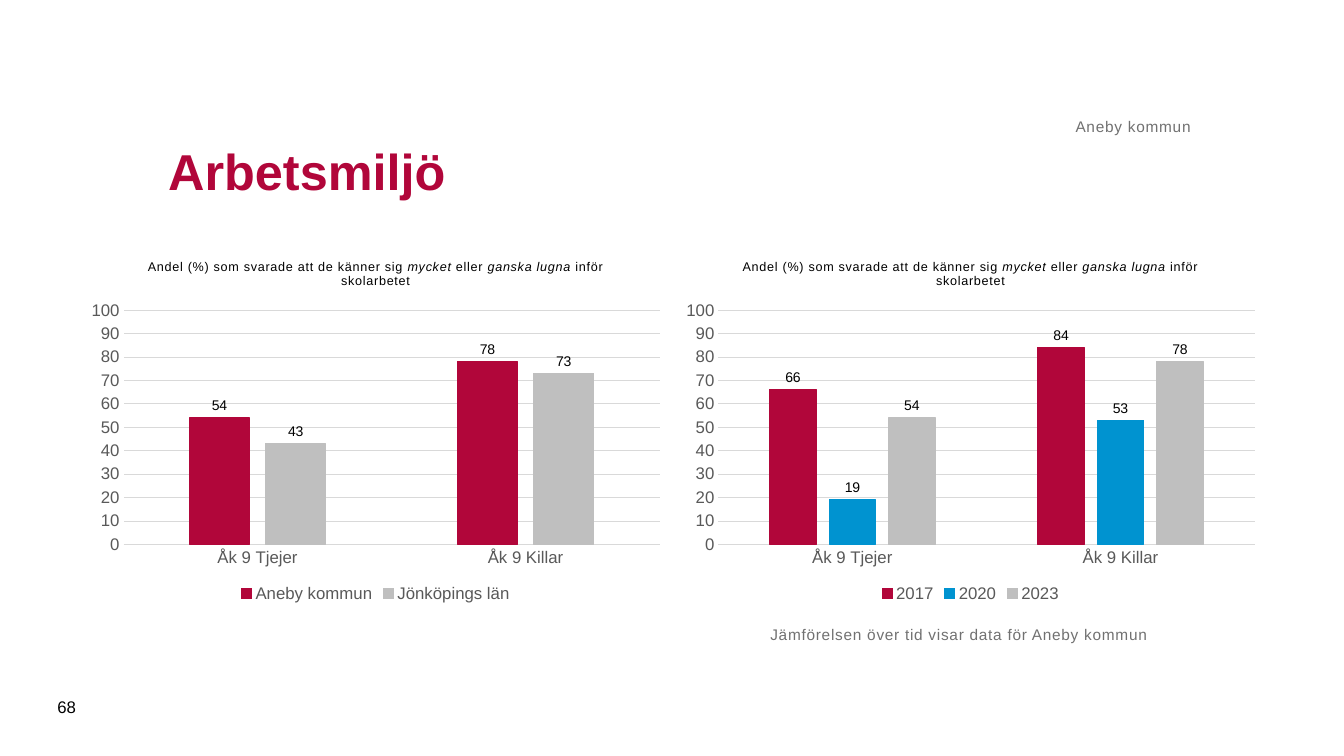
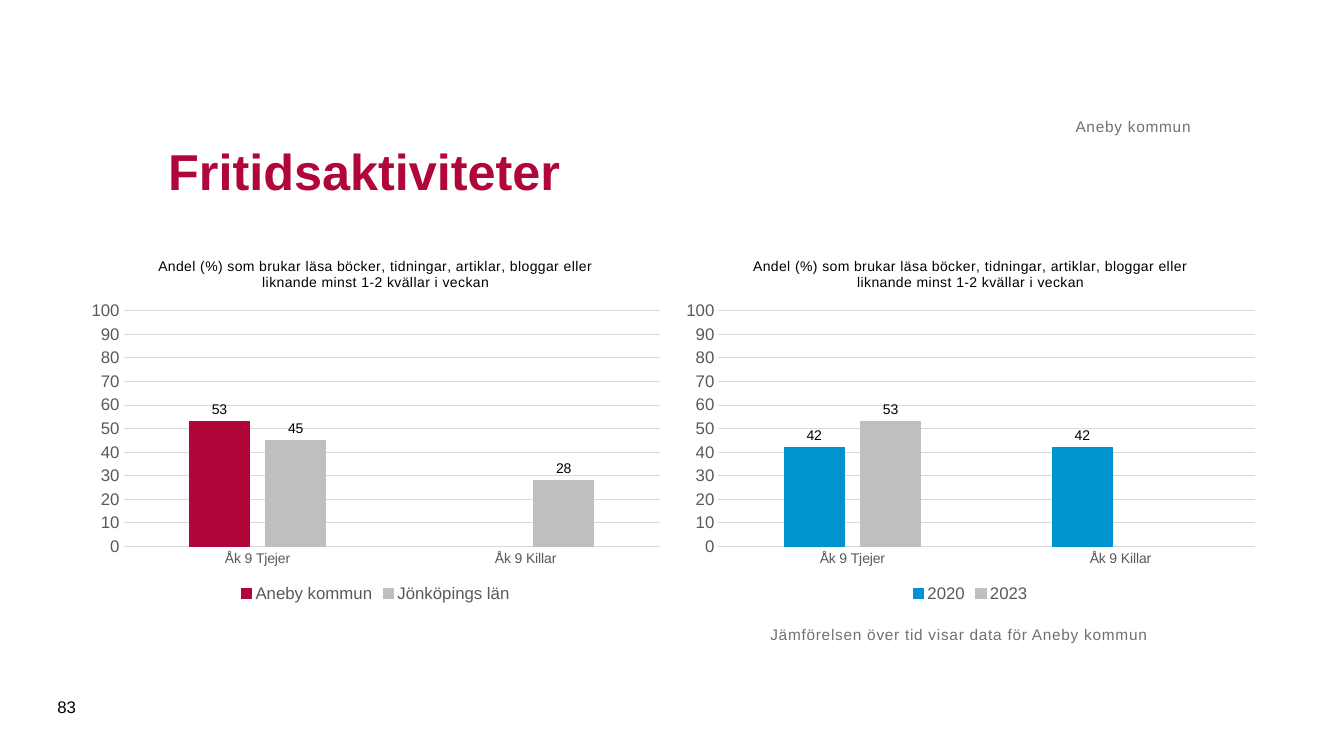
from pptx import Presentation
from pptx.chart.data import CategoryChartData
from pptx.dml.color import RGBColor
from pptx.enum.chart import XL_CHART_TYPE, XL_LABEL_POSITION, XL_LEGEND_POSITION, XL_TICK_MARK
from pptx.enum.text import MSO_ANCHOR, PP_ALIGN
from pptx.util import Inches, Pt

COLORS = {
    "crimson": "B1063A",
    "blue": "0093D0",
    "silver": "BFBFBF",
    "grid": "D9D9D9",
    "axis": "595959",
    "note": "717171",
    "black": "000000",
}
FONT = "Arial"
NUMBER_FORMAT = "#,##0;#,##0"
MUNICIPALITY = "Aneby kommun"
COUNTY = "Jönköpings län"
CATEGORIES = ["Åk 9 Tjejer", "Åk 9 Killar"]
SERIES_COLORS = {
    MUNICIPALITY: "crimson",
    COUNTY: "silver",
    "2017": "crimson",
    "2020": "blue",
    "2023": "silver",
}
CHART_LEFTS = (0.79, 6.69)

# Heading runs are (text, italic) pairs.
PAGES = [
    {
        "title": "Arbetsmiljö",
        "number": "68",
        "heading": [
            ("Andel (%) som svarade att de känner sig ", False),
            ("mycket", True),
            (" eller ", False),
            ("ganska lugna", True),
            (" inför skolarbetet", False),
        ],
        "heading_size": 9,
        "heading_spacing": 0.5,
        "category_size": 12,
        "charts": [
            {MUNICIPALITY: (54, 78), COUNTY: (43, 73)},
            {"2017": (66, 84), "2020": (19, 53), "2023": (54, 78)},
        ],
    },
    {
        "title": "Fritidsaktiviteter",
        "number": "83",
        "heading": [
            ("Andel (%) som brukar läsa böcker, tidningar, artiklar, "
             "bloggar eller liknande minst 1-2 kvällar i veckan", False),
        ],
        "heading_size": 10,
        "heading_spacing": 0.4,
        "category_size": 10,
        "charts": [
            {MUNICIPALITY: (53, None), COUNTY: (45, 28)},
            {"2020": (42, 42), "2023": (53, None)},
        ],
    },
]


def rgb(name):
    return RGBColor.from_string(COLORS[name])


def style_font(font, size, color, bold=False, italic=False):
    font.name = FONT
    font.size = Pt(size)
    font.bold = bold
    font.italic = italic
    font.color.rgb = rgb(color)


def set_line(line, color):
    line.color.rgb = rgb(color)
    line.width = Pt(0.75)


def add_span(para, text, size, color, bold=False, italic=False, spacing=0):
    """Add one run; spacing is the letter spacing in points."""
    span = para.add_run()
    span.text = text
    style_font(span.font, size, color, bold, italic)
    if spacing:
        span.font._element.set("spc", str(round(spacing * 100)))


def add_text(page, area, text, size, color, anchor=MSO_ANCHOR.MIDDLE,
             align=PP_ALIGN.LEFT, bold=False, spacing=0, inset=True):
    box = page.shapes.add_textbox(*map(Inches, area))
    frame = box.text_frame
    frame.word_wrap = True
    frame.vertical_anchor = anchor
    if not inset:
        frame.margin_left = frame.margin_right = 0
        frame.margin_top = frame.margin_bottom = 0
    para = frame.paragraphs[0]
    para.alignment = align
    add_span(para, text, size, color, bold, spacing=spacing)


def add_note(page, area, text, anchor, align):
    add_text(page, area, text, 11, "note", anchor, align, spacing=0.5, inset=False)


def style_axes(chart, category_size):
    categories, values = chart.category_axis, chart.value_axis
    for axis, size in ((categories, category_size), (values, 12)):
        axis.major_tick_mark = axis.minor_tick_mark = XL_TICK_MARK.NONE
        style_font(axis.tick_labels.font, size, "axis")
    set_line(categories.format.line, "grid")
    values.format.line.fill.background()
    values.minimum_scale, values.maximum_scale, values.major_unit = 0, 100, 10
    values.tick_labels.number_format = NUMBER_FORMAT
    values.tick_labels.number_format_is_linked = False
    set_line(values.major_gridlines.format.line, "grid")


def style_series(series):
    color = SERIES_COLORS[series.name]
    series.format.fill.solid()
    series.format.fill.fore_color.rgb = rgb(color)
    set_line(series.format.line, color)
    labels = series.data_labels
    labels.show_value = True
    labels.position = XL_LABEL_POSITION.OUTSIDE_END
    labels.number_format = NUMBER_FORMAT
    labels.number_format_is_linked = False
    style_font(labels.font, 10, "black")


def add_column_chart(page, left, content, series_values):
    data = CategoryChartData()
    data.categories = CATEGORIES
    for name, values in series_values.items():
        data.add_series(name, values)
    area = map(Inches, (left, 2.4, 5.87, 3.62))
    chart = page.shapes.add_chart(XL_CHART_TYPE.COLUMN_CLUSTERED, *area, data).chart
    style_font(chart.font, 10, "black")

    para = chart.chart_title.text_frame.paragraphs[0]
    for text, italic in content["heading"]:
        add_span(para, text, content["heading_size"], "black", italic=italic,
                 spacing=content["heading_spacing"])
    chart.chart_title.include_in_layout = False

    chart.has_legend = True
    chart.legend.position = XL_LEGEND_POSITION.BOTTOM
    chart.legend.include_in_layout = False
    style_font(chart.legend.font, 12, "axis")

    style_axes(chart, content["category_size"])
    plot = chart.plots[0]
    plot.gap_width = 219
    plot.overlap = -27
    plot.vary_by_categories = False
    for series in plot.series:
        style_series(series)


def add_page(deck, content):
    page = deck.slides.add_slide(deck.slide_layouts[6])
    for left, series_values in zip(CHART_LEFTS, content["charts"]):
        add_column_chart(page, left, content, series_values)
    add_text(page, (1.57, 0.98, 10.24, 1.42), content["title"], 36, "crimson", bold=True)
    add_note(page, (7.64, 6.2, 5.31, 0.94),
             f"Jämförelsen över tid visar data för {MUNICIPALITY}",
             MSO_ANCHOR.TOP, PP_ALIGN.LEFT)
    add_note(page, (1.57, 0.62, 10.24, 0.73), MUNICIPALITY,
             MSO_ANCHOR.BOTTOM, PP_ALIGN.RIGHT)
    add_text(page, (0.47, 6.81, 0.57, 0.4), content["number"], 12, "black")


def main():
    deck = Presentation()
    deck.slide_width, deck.slide_height = Inches(13.33), Inches(7.5)
    for content in PAGES:
        add_page(deck, content)
    deck.save("out.pptx")


if __name__ == "__main__":
    main()
